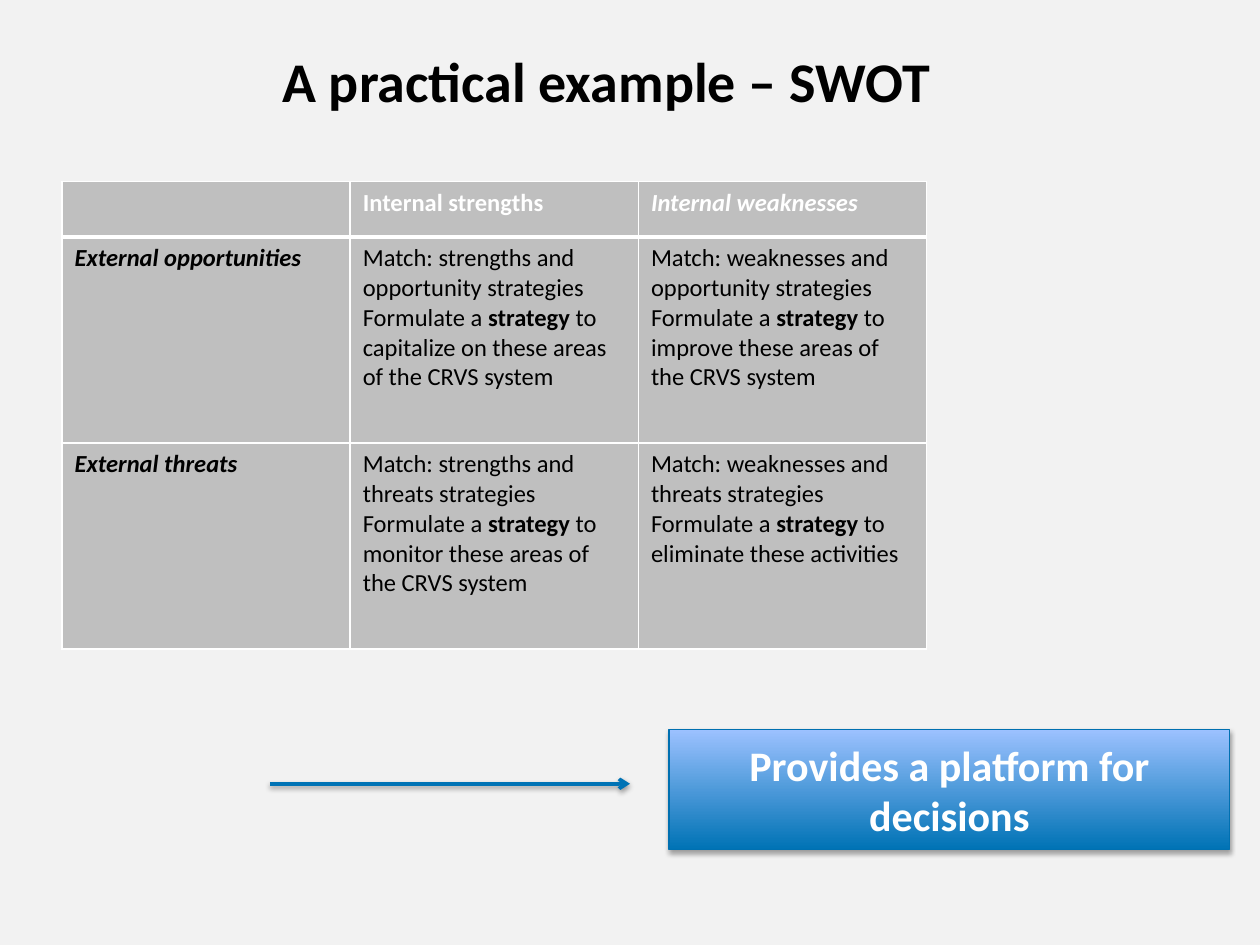
from lxml import etree
from pptx import Presentation
from pptx.dml.color import RGBColor
from pptx.enum.shapes import MSO_CONNECTOR, MSO_SHAPE
from pptx.enum.text import MSO_ANCHOR, PP_ALIGN
from pptx.oxml.ns import qn
from pptx.util import Cm, Pt

RECT = MSO_SHAPE.RECTANGLE
STRAIGHT = MSO_CONNECTOR.STRAIGHT
MIDDLE = MSO_ANCHOR.MIDDLE
LEFT, CENTER = PP_ALIGN.LEFT, PP_ALIGN.CENTER

BLACK = RGBColor(0x00, 0x00, 0x00)
WHITE = RGBColor(0xFF, 0xFF, 0xFF)
PALE = RGBColor(0xF2, 0xF2, 0xF2)
GREY = RGBColor(0xBF, 0xBF, 0xBF)
BLUE = RGBColor(0x00, 0x73, 0xB5)
EDGE = RGBColor(0x00, 0x70, 0xB1)
SKY = RGBColor(0x9C, 0xC1, 0xFF)

KEY = "strategy"
ROWS = [
    ["", "Internal strengths", "Internal weaknesses"],
    ["External opportunities",
     "Match: strengths and opportunity strategies\n"
     "Formulate a strategy to capitalize on these areas of the CRVS system",
     "Match: weaknesses and opportunity strategies\n"
     "Formulate a strategy to improve these areas of the CRVS system"],
    ["External threats",
     "Match: strengths and threats strategies\n"
     "Formulate a strategy to monitor these areas of the CRVS system",
     "Match: weaknesses and threats strategies\n"
     "Formulate a strategy to eliminate these activities"],
]


class Deck:
    face = "Calibri"

    def __init__(self, wide, high):
        self.prs = Presentation()
        self.prs.slide_width, self.prs.slide_height = wide, high
        self.slide = self.prs.slides.add_slide(self.prs.slide_layouts[5])
        fill = self.slide.background.fill
        fill.solid()
        fill.fore_color.rgb = PALE

    def style(self, run, size, color, bold=False, italic=False):
        font = run.font
        font.name, font.size = self.face, Pt(size)
        font.bold, font.italic = bold, italic
        font.color.rgb = color

    def shade(self, shape, alpha, dist):
        props = shape._element.spPr
        effects = etree.SubElement(props, qn("a:effectLst"))
        outer = etree.SubElement(
            effects, qn("a:outerShdw"), blurRad=str(Pt(3.1)),
            dist=str(Pt(dist)), dir="5400000", rotWithShape="0")
        color = etree.SubElement(outer, qn("a:srgbClr"), val=str(BLACK))
        etree.SubElement(color, qn("a:alpha"), val=str(alpha * 1000))

    def title(self, text, left, top, width, height):
        shape = self.slide.shapes.title
        shape.left, shape.top = left, top
        shape.width, shape.height = width, height
        frame = shape.text_frame
        frame.text = text
        frame.word_wrap = False
        frame.vertical_anchor = MIDDLE
        para = frame.paragraphs[0]
        para.alignment = LEFT
        self.style(para.runs[0], 32, BLACK, bold=True)

    def border(self, cell, sides):
        props = cell._tc.get_or_add_tcPr()
        for spot, (side, width) in enumerate(sides):
            line = etree.Element(qn("a:ln" + side), w=str(Pt(width)))
            fill = etree.SubElement(line, qn("a:solidFill"))
            etree.SubElement(fill, qn("a:srgbClr"), val=str(WHITE))
            props.insert(spot, line)

    def cell(self, cell, text, row, col):
        cell.fill.solid()
        cell.fill.fore_color.rgb = GREY
        top = 3 if row == 1 else 1
        base = 3 if row == 0 else 1
        self.border(cell, [("L", 1), ("R", 1), ("T", top), ("B", base)])
        cell.text_frame.text = text
        head = row == 0 or col == 0
        slant = col == 0 or (row == 0 and col == 2)
        color = WHITE if row == 0 else BLACK
        for para in cell.text_frame.paragraphs:
            before, key, after = para.text.partition(f" {KEY} ")
            if key:
                # Split the line so the key word stands out
                para.runs[0].text = before + " "
                para.add_run().text = KEY
                para.add_run().text = " " + after
            for run in para.runs:
                self.style(run, 14, color, head or run.text == KEY, slant)

    def table(self, rows, left, top, width, highs):
        count = len(rows[0])
        grid = self.slide.shapes.add_table(
            len(rows), count, left, top, width, sum(highs)).table
        for col in grid.columns:
            col.width = width // count
        for r, (texts, high) in enumerate(zip(rows, highs)):
            grid.rows[r].height = high
            for c, text in enumerate(texts):
                self.cell(grid.cell(r, c), text, r, c)

    def arrow(self, start, end, level):
        line = self.slide.shapes.add_connector(
            STRAIGHT, start, level, end, level)
        line.line.color.rgb = BLUE
        line.line.width = Pt(2)
        etree.SubElement(line.line._get_or_add_ln(), qn("a:tailEnd"),
                         type="arrow")
        self.shade(line, 38, 1.6)

    def box(self, text, left, top, width, height):
        shape = self.slide.shapes.add_shape(RECT, left, top, width, height)
        shape.fill.gradient()
        shape.fill.gradient_angle = 90
        for stop, color in zip(shape.fill.gradient_stops, (BLUE, SKY)):
            stop.color.rgb = color
        shape.line.color.rgb = EDGE
        shape.line.width = Pt(0.75)
        self.shade(shape, 35, 1.8)
        frame = shape.text_frame
        frame.text = text
        frame.word_wrap = True
        frame.vertical_anchor = MIDDLE
        para = frame.paragraphs[0]
        para.alignment = CENTER
        self.style(para.runs[0], 24, WHITE, bold=True)


def main():
    deck = Deck(Cm(25.4), Cm(19.05))

    # Heading
    deck.title("A practical example – SWOT",
               Cm(5.44), Cm(0.81), Cm(13.94), Cm(1.63))

    # SWOT grid
    deck.table(ROWS, Cm(1.25), Cm(3.66), Cm(17.43),
               [Cm(1.12), Cm(4.15), Cm(4.15)])

    # Outcome
    deck.arrow(Cm(5.44), Cm(12.7), Cm(15.8))
    deck.box("Provides a platform for decisions",
             Cm(13.49), Cm(14.71), Cm(11.3), Cm(2.41))

    deck.prs.save("out.pptx")


if __name__ == "__main__":
    main()
